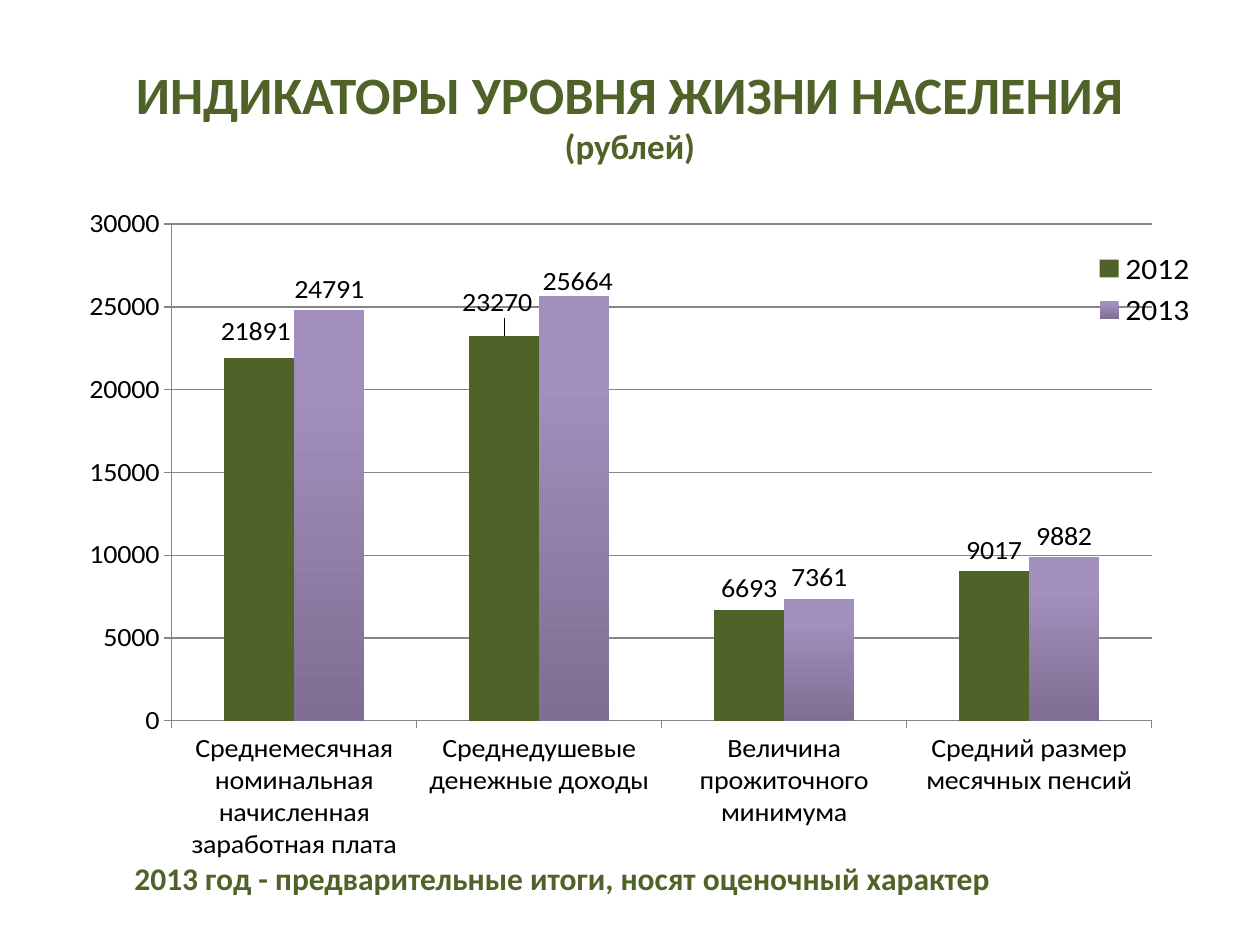
from lxml import etree
from pptx import Presentation
from pptx import util as u
from pptx.chart.data import CategoryChartData
from pptx.dml.color import RGBColor
from pptx.enum import chart as ch
from pptx.enum import text as tx
from pptx.oxml.ns import qn

GREEN, GREY, BLACK = "4F6228", "868686", "000000"
LILAC = ("A28FBD", "7F6E91")
CATS = ["Среднемесячная номинальная начисленная заработная плата",
        "Среднедушевые денежные доходы",
        "Величина прожиточного минимума",
        "Средний размер месячных пенсий"]
DATA = {"2012": (21891, 23270, 6693, 9017),
        "2013": (24791, 25664, 7361, 9882)}
# Label shifts as shares of the chart: (series, point) -> (x, y)
SHIFTS = {(0, 0): (-0.003, -0.01), (0, 1): (-0.006, -0.02), (1, 1): (0.003, 0.01)}


def color(code):
    return RGBColor.from_string(code)


def style(font, size, code=BLACK, bold=False):
    for key, val in {"name": "Calibri", "size": u.Pt(size), "bold": bold}.items():
        setattr(font, key, val)
    font.color.rgb = color(code)


def place(shape, box):
    for key, val in zip(("left", "top", "width", "height"), box):
        setattr(shape, key, u.Cm(val))


def layout(**vals):
    """Manual chart layout with the given settings, in schema order."""
    root = etree.Element(qn("c:layout"))
    man = etree.SubElement(root, qn("c:manualLayout"))
    for key, val in vals.items():
        etree.SubElement(man, qn("c:" + key)).set("val", str(val))
    return root


def heading(slide, box):
    title = slide.shapes.title
    place(title, box)
    frame = title.text_frame
    frame.word_wrap = True
    frame.auto_size = tx.MSO_AUTO_SIZE.NONE
    frame.vertical_anchor = tx.MSO_ANCHOR.BOTTOM
    frame.margin_bottom = 0
    para = frame.paragraphs[0]
    para.alignment = tx.PP_ALIGN.CENTER
    for i, (line, size) in enumerate((("ИНДИКАТОРЫ УРОВНЯ ЖИЗНИ НАСЕЛЕНИЯ", 30),
                                      ("(рублей)", 20))):
        if i:
            para.add_line_break()
        run = para.add_run()
        run.text = line
        style(run.font, size, GREEN, True)


def axes(chart):
    scale = chart.value_axis
    for key, val in {"minimum_scale": 0, "maximum_scale": 30000,
                     "major_unit": 5000, "has_major_gridlines": True}.items():
        setattr(scale, key, val)
    for axis in (chart.category_axis, scale):
        axis.major_tick_mark = ch.XL_TICK_MARK.OUTSIDE
        style(axis.tick_labels.font, 16)
    for part in (chart.category_axis, scale, scale.major_gridlines):
        part.format.line.color.rgb = color(GREY)
        part.format.line.width = u.Pt(0.75)


def labels(num, row):
    tags = row.data_labels
    tags.show_value = True
    tags.position = ch.XL_LABEL_POSITION.OUTSIDE_END
    style(tags.font, 16)
    for (owner, spot), (dx, dy) in SHIFTS.items():
        if owner == num:
            tag = row.points[spot].data_label
            style(tag.font, 16)
            tag.position = ch.XL_LABEL_POSITION.OUTSIDE_END
            node = tags._element.find(f"c:dLbl[c:idx='{spot}']", tags._element.nsmap)
            for item in tags._element.findall(qn("c:dLbl")):
                if item.find(qn("c:idx")).get("val") == str(spot):
                    node = item
            node.insert(1, layout(x=dx, y=dy))


def bars(slide, box):
    data = CategoryChartData()
    data.categories = CATS
    for name, vals in DATA.items():
        data.add_series(name, vals)
    chart = slide.shapes.add_chart(ch.XL_CHART_TYPE.COLUMN_CLUSTERED,
                                   *map(u.Cm, box), data).chart
    style(chart.font, 18)
    chart.has_title = False
    axes(chart)

    # Columns
    plot = chart.plots[0]
    plot.gap_width, plot.overlap, plot.vary_by_categories = 150, 0, False
    for num, row in enumerate(plot.series):
        fill = row.format.fill
        if num:
            fill.gradient()
            fill.gradient_angle = 270
            for stop, code, pos in zip(fill.gradient_stops, LILAC, (0.2, 1)):
                stop.color.rgb = color(code)
                stop.position = pos
        else:
            fill.solid()
            fill.fore_color.rgb = color(GREEN)
        labels(num, row)

    # Legend over the plot
    chart.has_legend = True
    key = chart.legend
    key.position = ch.XL_LEGEND_POSITION.RIGHT
    key.include_in_layout = True
    style(key.font, 18)

    # Fixed frames of legend and plot
    modes = {"xMode": "edge", "yMode": "edge"}
    for owner, vals in (
            (key._element, dict(modes, x=0.89, y=0.08, w=0.1, h=0.14)),
            (chart._chartSpace.chart.plotArea,
             dict(layoutTarget="inner", **modes, x=0.109, y=0.046, w=0.837, h=0.795))):
        for old in owner.findall(qn("c:layout")):
            owner.remove(old)
        first = 1 if owner is key._element else 0
        owner.insert(first, layout(**vals))


def note(slide, box):
    frame = slide.shapes.add_textbox(*map(u.Cm, box)).text_frame
    frame.word_wrap = True
    run = frame.paragraphs[0].add_run()
    run.text = "2013 год - предварительные итоги, носят оценочный характер"
    style(run.font, 18, GREEN, True)


def main():
    deck = Presentation()
    deck.slide_width, deck.slide_height = u.Cm(25.4), u.Cm(19.05)
    slide = deck.slides.add_slide(deck.slide_layouts[5])
    heading(slide, (1.27, 0.74, 22.86, 2.62))
    bars(slide, (0.89, 3.94, 23.6, 13.41))
    note(slide, (2.46, 17.2, 20.6, 1.02))
    deck.save("out.pptx")


if __name__ == "__main__":
    main()
